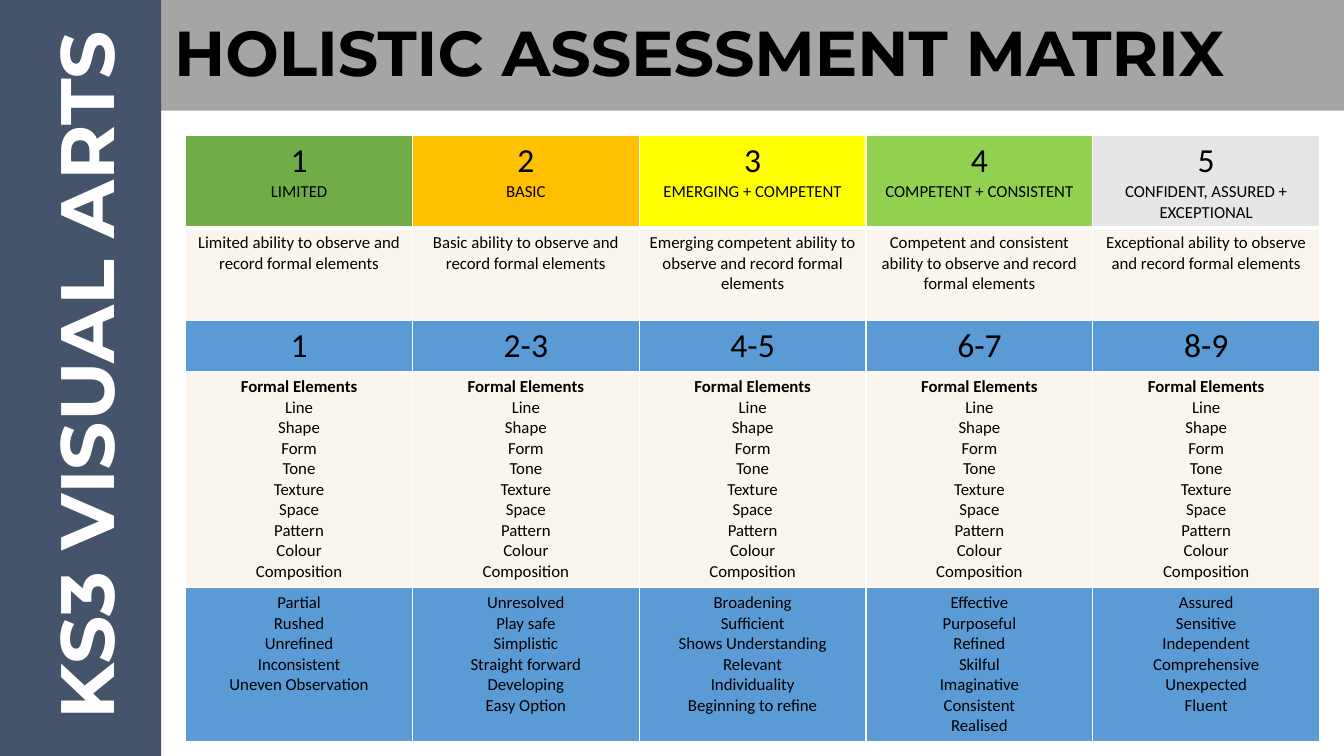
from dataclasses import dataclass

from lxml.etree import SubElement
from pptx import Presentation
from pptx.dml.color import RGBColor
from pptx.enum.shapes import MSO_SHAPE
from pptx.enum.text import MSO_ANCHOR, PP_ALIGN
from pptx.oxml.ns import qn
from pptx.util import Cm, Pt


@dataclass(frozen=True)
class Theme:
    heading_font: str = "Montserrat"
    body_font: str = "Calibri"
    black: str = "000000"
    white: str = "FFFFFF"
    title_band: str = "A5A5A5"
    subject_band: str = "44546A"
    cream: str = "FAF5ED"
    blue: str = "5B9BD5"
    levels: tuple = ("70AD47", "FFC000", "FFFF00", "92D050", "E7E6E6")
    title_size: float = 45.3
    indent_size: float = 60
    subject_size: float = 54
    grade_size: float = 24
    body_size: float = 12
    border: float = 1
    header_border: float = 3


def style_font(font, name, size, color, bold):
    for attribute, value in {"name": name, "size": Pt(size), "bold": bold}.items():
        setattr(font, attribute, value)
    font.color.rgb = RGBColor.from_string(color)


theme = Theme()
deck = Presentation()
deck.slide_width, deck.slide_height = Cm(33.87), Cm(19.05)
slide = deck.slides.add_slide(deck.slide_layouts[6])

bands = [
    ((4.06, 0, 29.81, 2.79), theme.title_band, theme.black, MSO_ANCHOR.TOP, "horz",
     [("HOLISTIC ASSESSMENT MATRIX", theme.title_size)]),
    ((0, 0, 4.06, 19.05), theme.subject_band, theme.white, MSO_ANCHOR.MIDDLE, "vert270",
     [(" ", theme.indent_size), ("KS3 VISUAL ARTS", theme.subject_size)]),
]
for bounds, fill, ink, anchor, direction, wording in bands:
    band = slide.shapes.add_shape(MSO_SHAPE.RECTANGLE, *map(Cm, bounds))
    band.shadow.inherit = False
    band.fill.solid()
    band.fill.fore_color.rgb = RGBColor.from_string(fill)
    band.line.fill.background()
    frame = band.text_frame
    frame_format = {
        "word_wrap": True,
        "vertical_anchor": anchor,
        "margin_left": Cm(0.33),
        "margin_top": Cm(0.33),
        "margin_right": Cm(0.33),
        "margin_bottom": Cm(0.33),
    }
    for attribute, value in frame_format.items():
        setattr(frame, attribute, value)
    frame._txBody.bodyPr.set("vert", direction)
    heading = frame.paragraphs[0]
    heading.alignment = PP_ALIGN.LEFT
    for text, size in wording:
        run = heading.add_run()
        run.text = text
        style_font(run.font, theme.heading_font, size, ink, True)

levels = ["LIMITED", "BASIC", "EMERGING + COMPETENT", "COMPETENT + CONSISTENT",
          "CONFIDENT, ASSURED + EXCEPTIONAL"]
abilities = ["Limited", "Basic", "Emerging competent", "Competent and consistent", "Exceptional"]
grades = ["1", "2-3", "4-5", "6-7", "8-9"]
formal_elements = ["Formal Elements", "Line", "Shape", "Form", "Tone", "Texture", "Space",
                   "Pattern", "Colour", "Composition"]
qualities = [
    ["Partial", "Rushed", "Unrefined", "Inconsistent", "Uneven Observation"],
    ["Unresolved", "Play safe", "Simplistic", "Straight forward", "Developing", "Easy Option"],
    ["Broadening", "Sufficient", "Shows Understanding", "Relevant", "Individuality",
     "Beginning to refine"],
    ["Effective", "Purposeful", "Refined", "Skilful", "Imaginative", "Consistent", "Realised"],
    ["Assured", "Sensitive", "Independent", "Comprehensive", "Unexpected", "Fluent"],
]

level_count = len(levels)
rows = [
    (2.31, theme.levels, theme.grade_size, False,
     [[str(number), level] for number, level in enumerate(levels, 1)]),
    (2.34, [theme.cream] * level_count, theme.body_size, False,
     [[f"{ability} ability to observe and record formal elements"] for ability in abilities]),
    (1.27, [theme.blue] * level_count, theme.grade_size, False, [[grade] for grade in grades]),
    (5.44, [theme.cream] * level_count, theme.body_size, True, [formal_elements] * level_count),
    (3.86, [theme.blue] * level_count, theme.body_size, False, qualities),
]

column_width = 5.715
matrix = slide.shapes.add_table(
    len(rows), level_count, Cm(4.68), Cm(3.42),
    Cm(column_width * level_count), Cm(sum(row[0] for row in rows)),
).table
for attribute, value in {"first_row": False, "horz_banding": False}.items():
    setattr(matrix, attribute, value)
for column in matrix.columns:
    column.width = Cm(column_width)

for row_index, (height, fills, lead_size, lead_bold, entries) in enumerate(rows):
    matrix.rows[row_index].height = Cm(height)
    for column_index, (fill, lines) in enumerate(zip(fills, entries)):
        cell = matrix.cell(row_index, column_index)
        cell_properties = cell._tc.get_or_add_tcPr()
        for side in ("lnL", "lnR", "lnT", "lnB"):
            under_header = row_index == 0 and side == "lnB"
            weight = theme.header_border if under_header else theme.border
            border = SubElement(cell_properties, qn(f"a:{side}"), w=str(Pt(weight)))
            border_fill = SubElement(border, qn("a:solidFill"))
            SubElement(border_fill, qn("a:srgbClr"), val=theme.white)
        cell.fill.solid()
        cell.fill.fore_color.rgb = RGBColor.from_string(fill)
        cell.text_frame.text = "\n".join(lines)
        for line_index, line in enumerate(cell.text_frame.paragraphs):
            leading = line_index == 0
            line.alignment = PP_ALIGN.CENTER
            style_font(line.runs[0].font, theme.body_font,
                       lead_size if leading else theme.body_size,
                       theme.black, leading and lead_bold)

deck.save("out.pptx")
